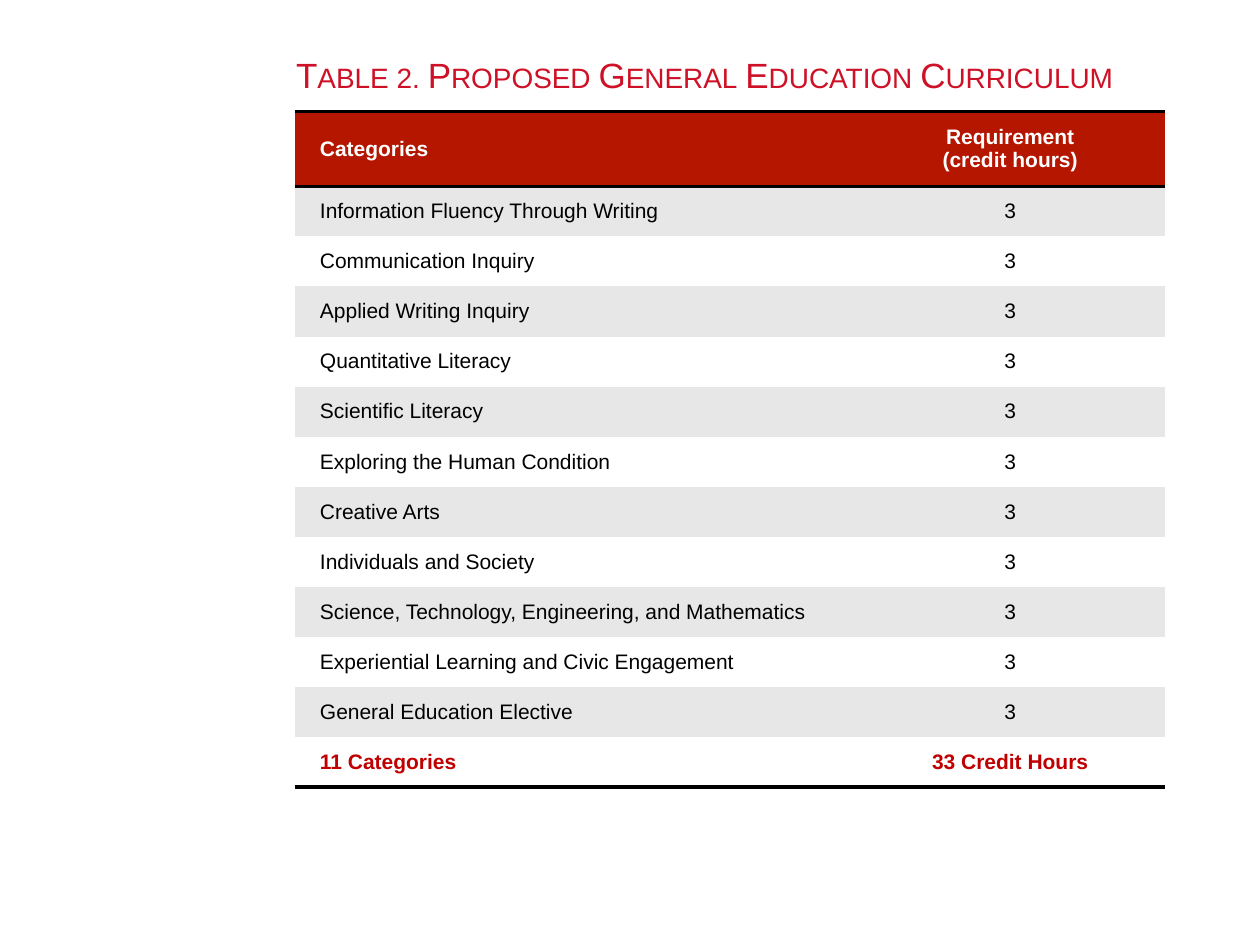
from lxml.etree import SubElement
from pptx import Presentation
from pptx.dml.color import RGBColor
from pptx.enum.text import MSO_ANCHOR, PP_ALIGN
from pptx.oxml import parse_xml
from pptx.oxml.ns import nsdecls, qn
from pptx.util import Cm, Pt

TITLE = "Table 2. Proposed General Education Curriculum"
HEADER = ("Categories", "Requirement\n(credit hours)")
CATEGORIES = [
    "Information Fluency Through Writing",
    "Communication Inquiry",
    "Applied Writing Inquiry",
    "Quantitative Literacy",
    "Scientific Literacy",
    "Exploring the Human Condition",
    "Creative Arts",
    "Individuals and Society",
    "Science, Technology, Engineering, and Mathematics",
    "Experiential Learning and Civic Engagement",
    "General Education Elective",
]
HOURS = 3
TOTAL = (f"{len(CATEGORIES)} Categories", f"{len(CATEGORIES) * HOURS} Credit Hours")
ROWS = [HEADER, *((name, str(HOURS)) for name in CATEGORIES), TOTAL]

COL_WIDTHS = (11.3, 6.25)
HEADER_HEIGHT, ROW_HEIGHT = 1.48, 0.99
NO_GRID_STYLE = "{2D5ABB26-0587-4C30-8999-92F81FD0307C}"


def rgb(value):
    return RGBColor.from_string(value)


def write(tf, text, size=12, color="000000", bold=False, align=PP_ALIGN.LEFT, small_caps=False):
    tf.word_wrap = True
    for i, line in enumerate(text.split("\n")):
        p = tf.paragraphs[0] if i == 0 else tf.add_paragraph()
        p.alignment = align
        r = p.add_run()
        r.text = line
        r.font.name = "Arial"
        r.font.size = Pt(size)
        r.font.bold = bold
        r.font.color.rgb = rgb(color)
        if small_caps:
            r.font._element.set("cap", "small")


def add_borders(cell, sides):
    tc_pr = cell._tc.get_or_add_tcPr()
    for i, side in enumerate(sides):
        ln = parse_xml(f'<a:ln{side} {nsdecls("a")} w="{Pt(2)}"/>')
        fill = SubElement(ln, qn("a:solidFill"))
        SubElement(fill, qn("a:srgbClr")).set("val", "000000")
        tc_pr.insert(i, ln)


def row_format(row):
    if row == 0:
        return "B51600", "FFFFFF", True, "TB"
    if row == len(ROWS) - 1:
        return "FFFFFF", "C00000", True, "B"
    return ("E7E7E7" if row % 2 else "FFFFFF"), "000000", False, ""


def add_title(s):
    sp = s.shapes.add_textbox(Cm(5.72), Cm(0.76), Cm(18.42), Cm(1.47))
    sp.text_frame.vertical_anchor = MSO_ANCHOR.MIDDLE
    write(sp.text_frame, TITLE, size=20, color="CE1126", small_caps=True)


def add_curriculum(s):
    height = HEADER_HEIGHT + ROW_HEIGHT * (len(ROWS) - 1)
    frame = s.shapes.add_table(
        len(ROWS), len(COL_WIDTHS), Cm(5.94), Cm(2.24), Cm(sum(COL_WIDTHS)), Cm(height)
    )
    table = frame.table
    table._tbl.tblPr.find(qn("a:tableStyleId")).text = NO_GRID_STYLE
    for column, width in zip(table.columns, COL_WIDTHS):
        column.width = Cm(width)
    for i, texts in enumerate(ROWS):
        table.rows[i].height = Cm(ROW_HEIGHT if i else HEADER_HEIGHT)
        fill, color, bold, sides = row_format(i)
        for j, text in enumerate(texts):
            cell = table.cell(i, j)
            cell.margin_left = cell.margin_right = Cm(0.51)
            cell.margin_top = cell.margin_bottom = Cm(0.25)
            cell.vertical_anchor = MSO_ANCHOR.MIDDLE
            cell.fill.solid()
            cell.fill.fore_color.rgb = rgb(fill)
            add_borders(cell, sides)
            align = PP_ALIGN.CENTER if j else PP_ALIGN.LEFT
            write(cell.text_frame, text, color=color, bold=bold, align=align)


def main():
    prs = Presentation()
    prs.slide_width, prs.slide_height = Cm(25.4), Cm(19.05)
    s = prs.slides.add_slide(prs.slide_layouts[6])
    add_title(s)
    add_curriculum(s)
    prs.save("out.pptx")


if __name__ == "__main__":
    main()
